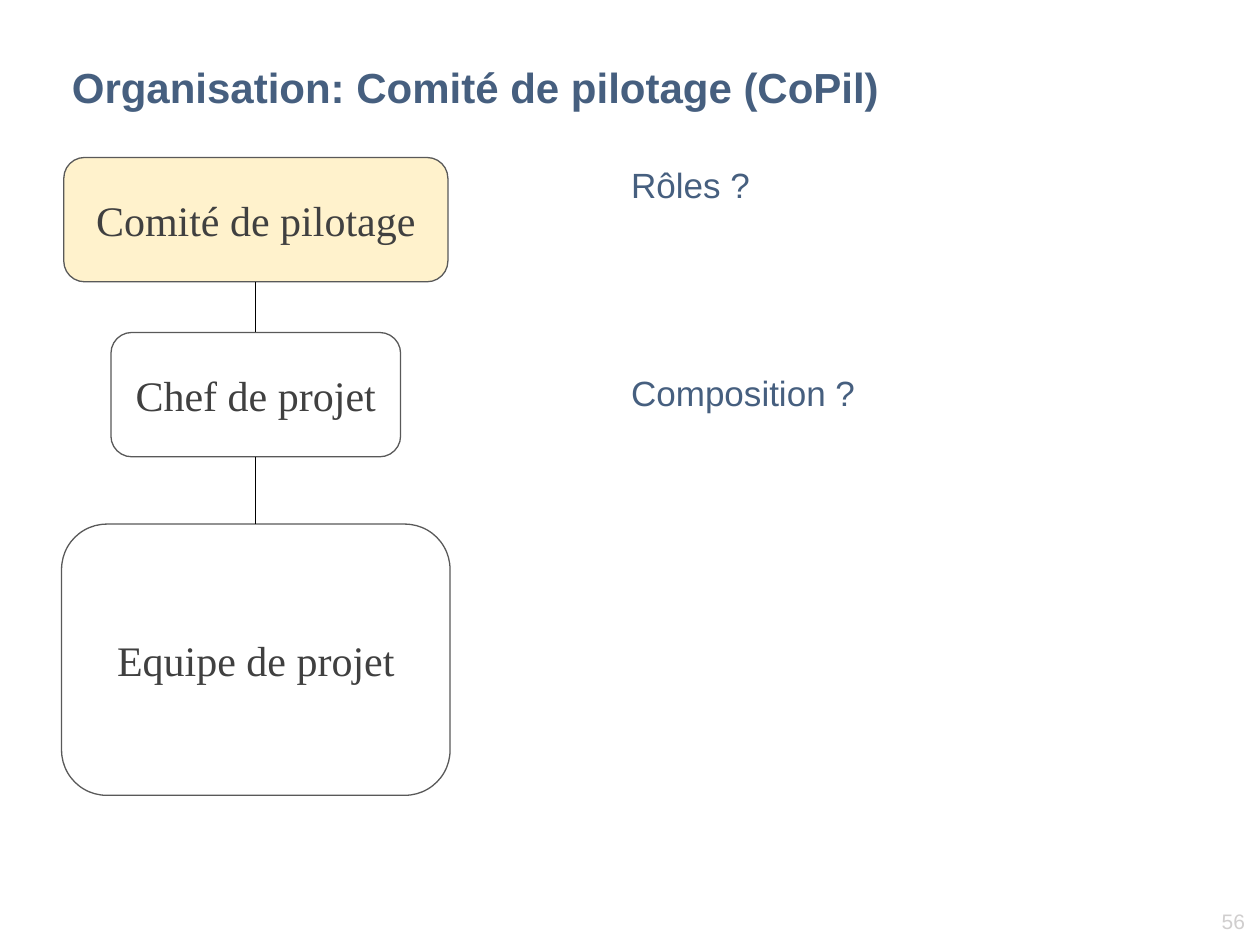
import pptx
import pptx.dml.color
import pptx.enum.shapes
import pptx.enum.text
import pptx.oxml.ns
import pptx.util
from lxml import etree

Pt = pptx.util.Pt
ALIGN = pptx.enum.text.PP_ALIGN
ANCHOR = pptx.enum.text.MSO_ANCHOR

COLORS = {
    "heading": "465F7F",
    "label": "404040",
    "outline": "595959",
    "highlight": "FFF2CC",
    "link": "000000",
    "number": "D0CECE",
}


class SlideBuilder:
    def __init__(self, slide):
        self.s = slide

    def color(self, name):
        return pptx.dml.color.RGBColor.from_string(COLORS[name])

    def add_runs(self, sp, paragraphs, size, color, font="Arial", bold=False,
                 align=ALIGN.LEFT, anchor=ANCHOR.TOP):
        """Fill a shape with (text, space before) paragraphs."""
        tf = sp.text_frame
        tf.word_wrap = True
        tf.vertical_anchor = anchor
        for i, (text, before) in enumerate(paragraphs):
            p = tf.add_paragraph() if i else tf.paragraphs[0]
            p.alignment = align
            p.space_before = Pt(before)
            r = p.add_run()
            r.text = text
            r.font.name = font
            r.font.size = Pt(size)
            r.font.bold = bold
            r.font.color.rgb = self.color(color)

    def text(self, x, y, w, h, paragraphs, size, color, **style):
        sp = self.s.shapes.add_textbox(Pt(x), Pt(y), Pt(w), Pt(h))
        self.add_runs(sp, paragraphs, size, color, **style)

    def box(self, center, y, w, h, label, fill=None):
        sp = self.s.shapes.add_shape(
            pptx.enum.shapes.MSO_SHAPE.ROUNDED_RECTANGLE,
            Pt(center - w / 2), Pt(y), Pt(w), Pt(h))
        sp.shadow.inherit = False
        if fill:
            sp.fill.solid()
            sp.fill.fore_color.rgb = self.color(fill)
        else:
            sp.fill.background()
        sp.line.color.rgb = self.color("outline")
        sp.line.width = Pt(0.75)
        self.add_runs(sp, [(label, 2.4)], 24, "label", font="Times New Roman",
                      align=ALIGN.CENTER, anchor=ANCHOR.MIDDLE)
        return sp

    def link(self, upper, lower):
        """Join the bottom of one box to the top of the next."""
        cx = self.s.shapes.add_connector(
            pptx.enum.shapes.MSO_CONNECTOR.STRAIGHT, 0, 0, 0, 0)
        cx.begin_connect(upper, 2)
        cx.end_connect(lower, 0)
        cx.line.color.rgb = self.color("link")
        cx.line.width = Pt(0.75)
        etree.SubElement(cx._element.spPr, pptx.oxml.ns.qn("a:effectLst"))


def main():
    prs = pptx.Presentation()
    prs.slide_width, prs.slide_height = Pt(720), Pt(540)
    b = SlideBuilder(prs.slides.add_slide(prs.slide_layouts[6]))

    # Page number and title
    b.text(659.5, 515.5, 59, 21.6, [("56", 0)], 12, "number",
           align=ALIGN.RIGHT)
    b.text(34, 29.5, 610, 40.5,
           [("Organisation: Comité de pilotage (CoPil)", 0)], 24, "heading",
           bold=True, anchor=ANCHOR.MIDDLE)

    # Organisation chart, top to bottom
    levels = [
        (90, 219.5, 71, "Comité de pilotage", "highlight"),
        (190, 165.5, 71, "Chef de projet", None),
        (299.5, 222, 155, "Equipe de projet", None),
    ]
    boxes = [b.box(146.2, *level) for level in levels]
    for upper, lower in zip(boxes, boxes[1:]):
        b.link(upper, lower)

    # Questions
    b.text(353.5, 90, 290, 301, [("Rôles ?", 2), ("Composition ?", 95)],
           20, "heading")

    prs.save("out.pptx")


if __name__ == "__main__":
    main()
